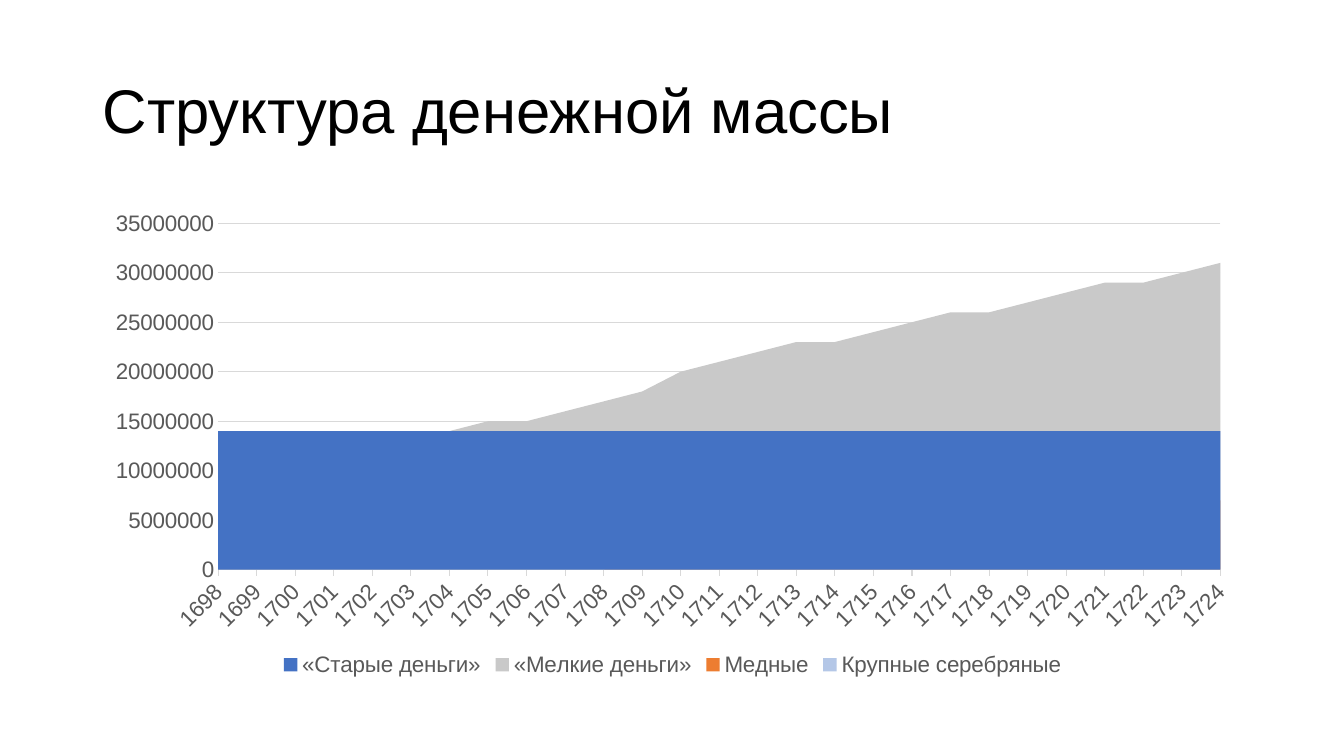
import dataclasses
import pptx
import pptx.util
import pptx.dml.color
import pptx.chart.data
import pptx.enum.chart
import pptx.enum.text


@dataclasses.dataclass(frozen=True)
class Theme:
    """Colours, font and type sizes of the slide."""
    font: str = "Arial"
    head: int = 44
    body: int = 16
    hair: float = 0.75
    ink: str = "000000"
    text: str = "595959"
    rule: str = "D9D9D9"
    fills: tuple = ("4472C4", "C9C9C9", "ED7D31", "B4C7E7")


THEME = Theme()
WIDE, HIGH = 13.33, 7.5
YEARS = range(1698, 1725)
UNIT = 1000000
MONEY = {
    "«Старые деньги»": [14] * len(YEARS),
    "«Мелкие деньги»": [
        0, 1, 3, 6, 11, 13, 14, 15, 15, 16, 17, 18, 20, 21,
        22, 23, 23, 24, 25, 26, 26, 27, 28, 29, 29, 30, 31],
    "Медные": [None] * 2 + [0] * 9 + [1] * 5 + [2] * 4 + [3, 4, 4, 6, 6, 7, 7],
    "Крупные серебряные": [None] * 20 + [1, 1, 2, 3, 3, 4, 4],
}


def tint(hue):
    """Turn a hex string into a colour."""
    return pptx.dml.color.RGBColor.from_string(hue)


def style(font, size, hue):
    """Set face, size and colour of a font."""
    font.name = THEME.font
    font.size = pptx.util.Pt(size)
    font.color.rgb = tint(hue)


def rule(line):
    """Draw a line as a pale hairline."""
    line.color.rgb = tint(THEME.rule)
    line.width = pptx.util.Pt(THEME.hair)


def title(slide, box, words):
    """Place the heading in its box."""
    frame = slide.shapes.add_textbox(*box).text_frame
    frame.word_wrap = True
    frame.vertical_anchor = pptx.enum.text.MSO_ANCHOR.MIDDLE
    para = frame.paragraphs[0]
    para.line_spacing = 0.9
    run = para.add_run()
    run.text = words
    style(run.font, THEME.head, THEME.ink)


def axes(chart):
    """Style the year axis and the value axis."""
    marks = pptx.enum.chart.XL_TICK_MARK
    years, sums = chart.category_axis, chart.value_axis
    for axis, mark in ((years, marks.OUTSIDE), (sums, marks.NONE)):
        axis.major_tick_mark = mark
        axis.minor_tick_mark = marks.NONE
        style(axis.tick_labels.font, THEME.body, THEME.text)
    years.has_major_gridlines = False
    rule(years.format.line)
    years._element.txPr.bodyPr.set("rot", "-2700000")
    sums.minimum_scale, sums.maximum_scale = 0, 35 * UNIT
    sums.major_unit = 5 * UNIT
    sums.has_major_gridlines = True
    rule(sums.major_gridlines.format.line)
    sums.format.line.fill.background()
    for cross in sums._element.xpath("c:crossBetween"):
        cross.set("val", "midCat")


def graph(slide, box):
    """Place the area chart in its box."""
    data = pptx.chart.data.CategoryChartData(number_format="General")
    data.categories = [str(year) for year in YEARS]
    for name, sums in MONEY.items():
        data.add_series(name, [
            None if value is None else value * UNIT for value in sums])
    kind = pptx.enum.chart.XL_CHART_TYPE.AREA
    chart = slide.shapes.add_chart(kind, *box, data).chart
    style(chart.font, THEME.body, THEME.ink)
    chart.has_title = False
    plot = chart.plots[0]
    plot.vary_by_categories = False
    for part, hue in zip(plot.series, THEME.fills):
        part.format.fill.solid()
        part.format.fill.fore_color.rgb = tint(hue)
        part.format.line.fill.background()
    axes(chart)
    chart.has_legend = True
    chart.legend.position = pptx.enum.chart.XL_LEGEND_POSITION.BOTTOM
    chart.legend.include_in_layout = False
    style(chart.legend.font, THEME.body, THEME.text)


def main():
    """Build the slide and save it."""
    deck = pptx.Presentation()
    inch = pptx.util.Inches
    deck.slide_width, deck.slide_height = inch(WIDE), inch(HIGH)
    slide = deck.slides.add_slide(deck.slide_layouts[6])
    left, width = inch(0.92), inch(11.5)
    title(slide, (left, inch(0.4), width, inch(1.45)), "Структура денежной массы")
    graph(slide, (left, inch(2), width, inch(4.76)))
    deck.save("out.pptx")


if __name__ == "__main__":
    main()
